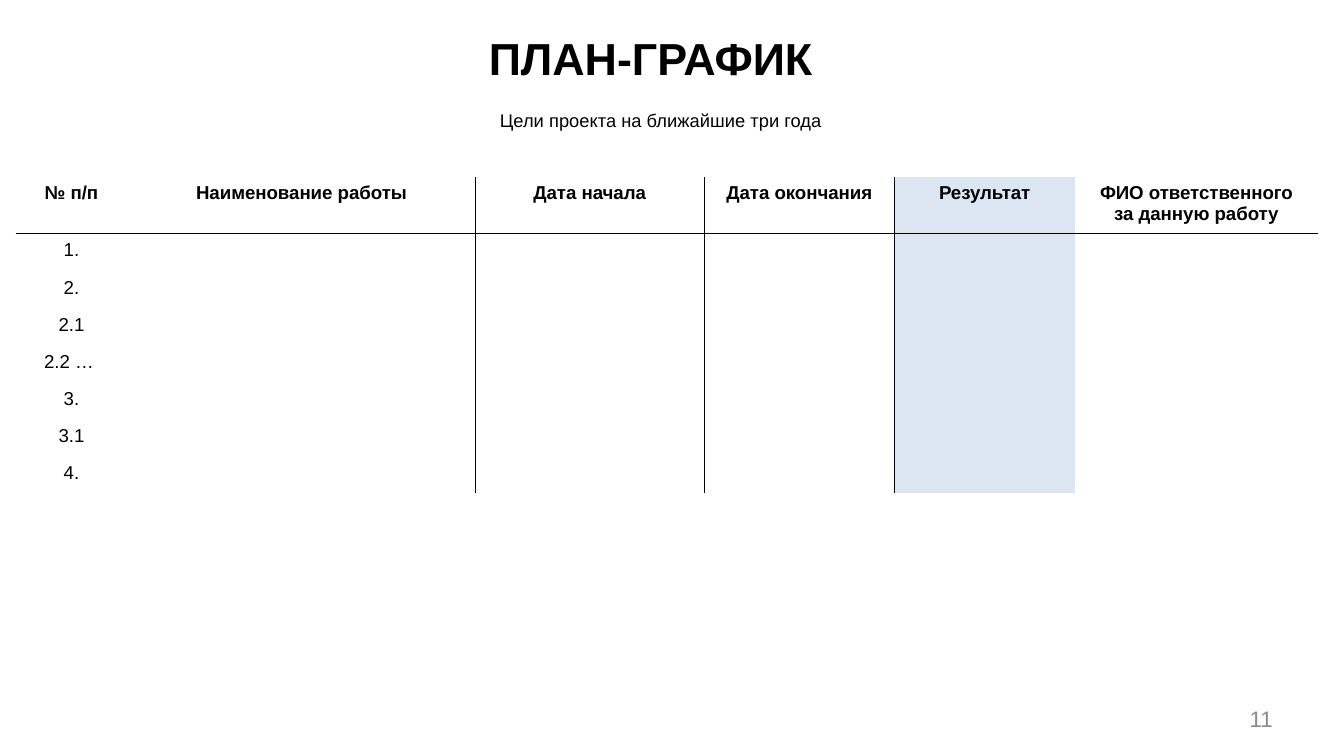
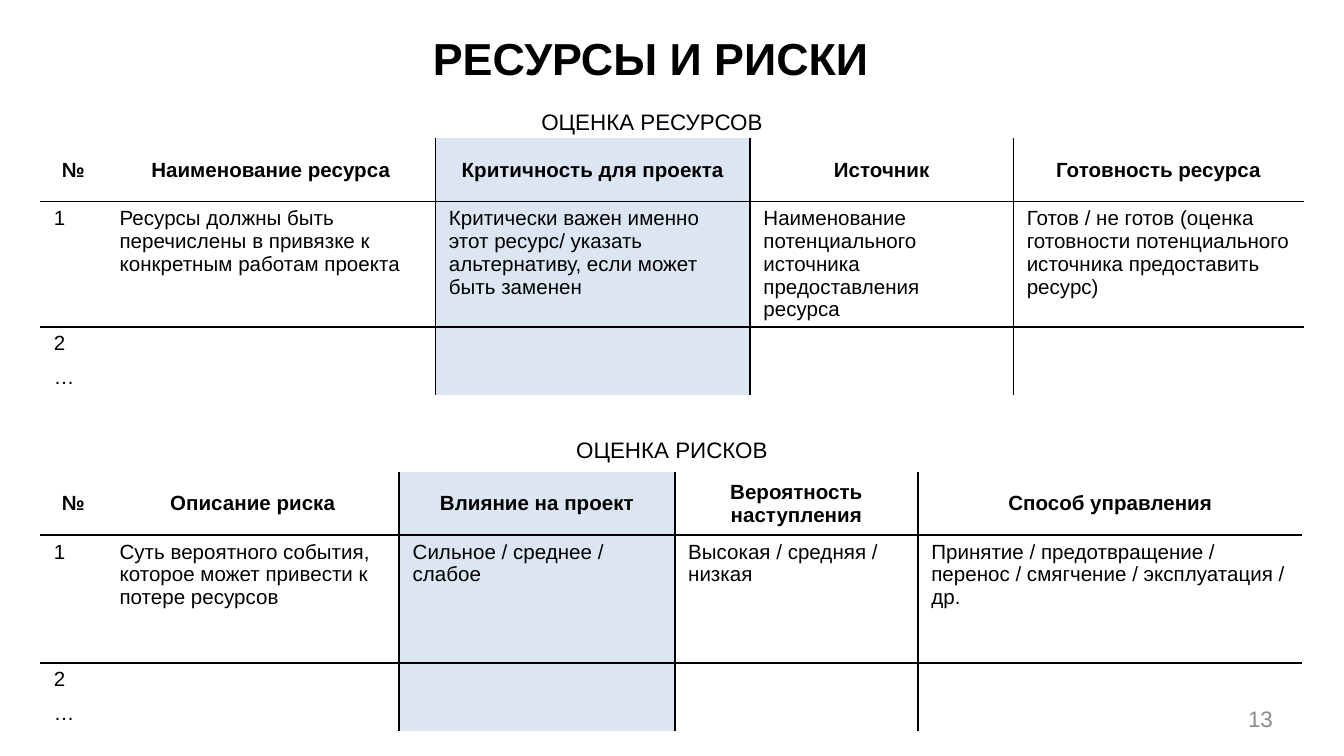
from lxml.etree import SubElement
from pptx import Presentation
from pptx.dml.color import RGBColor
from pptx.enum.text import MSO_ANCHOR as Anchor, MSO_AUTO_SIZE as AutoSize, PP_ALIGN as Align
from pptx.oxml.ns import qn
from pptx.util import Pt

BLACK = RGBColor(0x00, 0x00, 0x00)
GREY = RGBColor(0x8C, 0x8C, 0x8C)
LIGHT_BLUE = RGBColor(0xDC, 0xE6, 0xF2)
FONT = "Arial"
TITLE_ONLY = 5


class Deck:
    """Holds the shared style and the current slide."""

    def __init__(self):
        self.presentation = Presentation()
        self.presentation.slide_width = Pt(720)
        self.presentation.slide_height = Pt(405)
        self.slide = None

    def add_slide(self, title, number):
        layout = self.presentation.slide_layouts[TITLE_ONLY]
        self.slide = self.presentation.slides.add_slide(layout)
        shape = self.slide.shapes.title
        shape.left, shape.top, shape.width, shape.height = Pt(110), Pt(7), Pt(477), Pt(42)
        self.fill_frame(shape.text_frame, title, 24, bold=True, anchor=Anchor.BOTTOM)
        self.add_text(str(number), 632, 372, 57, 26, 12, GREY, Align.RIGHT)

    def fill_frame(self, frame, text, size, color=BLACK, align=Align.CENTER,
                   anchor=Anchor.MIDDLE, bold=False):
        frame.word_wrap = True
        frame.auto_size = AutoSize.NONE
        frame.vertical_anchor = anchor
        self.fill_paragraph(frame.paragraphs[0], text, size, color, align, bold)

    def fill_paragraph(self, paragraph, text, size, color, align, bold):
        paragraph.alignment = align
        font = paragraph.font
        font.name, font.size, font.bold = FONT, Pt(size), bold
        font.color.rgb = color
        if text:
            paragraph.add_run().text = text
        else:
            # Keeps an empty cell as low as its row
            SubElement(paragraph._p, qn("a:endParaRPr"), sz=str(size * 100))

    def add_text(self, text, left, top, width, height, size, color=BLACK,
                 align=Align.CENTER, anchor=Anchor.MIDDLE):
        shape = self.slide.shapes.add_textbox(Pt(left), Pt(top), Pt(width), Pt(height))
        self.fill_frame(shape.text_frame, text, size, color, align, anchor)

    def add_table(self, rows, left, top, widths, heights, verticals, horizontals,
                  shaded, size, header_anchor=Anchor.MIDDLE, body_align=Align.LEFT,
                  body_spacing=1.0):
        """Line widths are keyed by the column or row that they precede."""
        shape = self.slide.shapes.add_table(
            len(heights), len(widths), Pt(left), Pt(top), Pt(sum(widths)), Pt(sum(heights)))
        table = shape.table
        table.first_row = table.horz_banding = False
        for column, width in zip(table.columns, widths):
            column.width = Pt(width)
        for row, height in zip(table.rows, heights):
            row.height = Pt(height)
        for r, texts in enumerate(rows):
            for c in range(len(widths)):
                cell = table.cell(r, c)
                header = r == 0
                cell.margin_left = cell.margin_right = Pt(7.2)
                cell.margin_top = cell.margin_bottom = Pt(2.9)
                cell.vertical_anchor = header_anchor if header else Anchor.TOP
                self.add_borders(cell, (verticals.get(c), verticals.get(c + 1),
                                        horizontals.get(r), horizontals.get(r + 1)))
                if c == shaded:
                    cell.fill.solid()
                    cell.fill.fore_color.rgb = LIGHT_BLUE
                else:
                    cell.fill.background()
                paragraph = cell.text_frame.paragraphs[0]
                paragraph.line_spacing = 1.0 if header else body_spacing
                self.fill_paragraph(paragraph, texts[c] if c < len(texts) else "", size,
                                    BLACK, Align.CENTER if header else body_align, header)

    def add_borders(self, cell, widths):
        properties = cell._tc.get_or_add_tcPr()
        for side, width in zip(("lnL", "lnR", "lnT", "lnB"), widths):
            line = SubElement(properties, qn(f"a:{side}"), w=str(int(Pt(width or 0))))
            if width:
                fill = SubElement(line, qn("a:solidFill"))
                SubElement(fill, qn("a:srgbClr"), val=str(BLACK))
            else:
                SubElement(line, qn("a:noFill"))


def build_schedule(deck):
    deck.add_slide("ПЛАН-ГРАФИК", 11)
    deck.add_text("Цели проекта на ближайшие три года", 82, 55, 544, 17, 9.8,
                  anchor=Anchor.TOP)
    header = ["№ п/п", "Наименование работы", "Дата начала", "Дата окончания",
              "Результат", "ФИО ответственного за данную работу"]
    numbers = ["1.", "2.", "2.1", "2.2 … ", "3.", "3.1", "4."]
    deck.add_table(
        [header] + [[number] for number in numbers], 8.4, 95,
        widths=[59.8, 186.5, 122.4, 102.2, 96.5, 130.3],
        heights=[30] + [19.9] * len(numbers),
        verticals={2: 0.25, 3: 0.25, 4: 1}, horizontals={1: 0.25},
        shaded=4, size=10, header_anchor=Anchor.TOP,
        body_align=Align.CENTER, body_spacing=1.07)


def build_resources_and_risks(deck):
    deck.add_slide("РЕСУРСЫ И РИСКИ", 13)

    # Heading, its left and top, table top, column widths, example row height, rows
    resources = (
        "ОЦЕНКА РЕСУРСОВ", 111, 52.6, 74, [35.3, 176.4, 168.5, 141.1, 155.5], 66.4,
        ["№", "Наименование ресурса", "Критичность для проекта", "Источник",
         "Готовность ресурса"],
        ["1", "Ресурсы должны быть перечислены в привязке к конкретным работам проекта",
         "Критически важен именно этот ресурс/ указать альтернативу, если может быть заменен",
         "Наименование потенциального источника предоставления ресурса",
         "Готов / не готов (оценка готовности потенциального источника предоставить ресурс)"])
    risks = (
        "ОЦЕНКА РИСКОВ", 121.7, 228.2, 252.7, [35.3, 157, 147.6, 130.3, 206], 68.4,
        ["№", "Описание риска", "Влияние на проект", "Вероятность наступления",
         "Способ управления"],
        ["1", "Суть вероятного события, которое может привести к потере ресурсов",
         "Сильное / среднее / слабое", "Высокая / средняя / низкая",
         "Принятие / предотвращение / перенос / смягчение / эксплуатация / др."])

    for heading, left, top, table_top, widths, height, header, example in (resources, risks):
        deck.add_text(heading, left, top, 476.6, 25.2, 12)
        deck.add_table(
            [header, example, ["2"], ["…"]], 21.6, table_top, widths,
            heights=[34, height, 18.2, 18.2],
            verticals={2: 1, 3: 1, 4: 1}, horizontals={1: 1, 2: 1},
            shaded=2, size=11)


def main():
    deck = Deck()
    build_schedule(deck)
    build_resources_and_risks(deck)
    deck.presentation.save("out.pptx")


if __name__ == "__main__":
    main()
